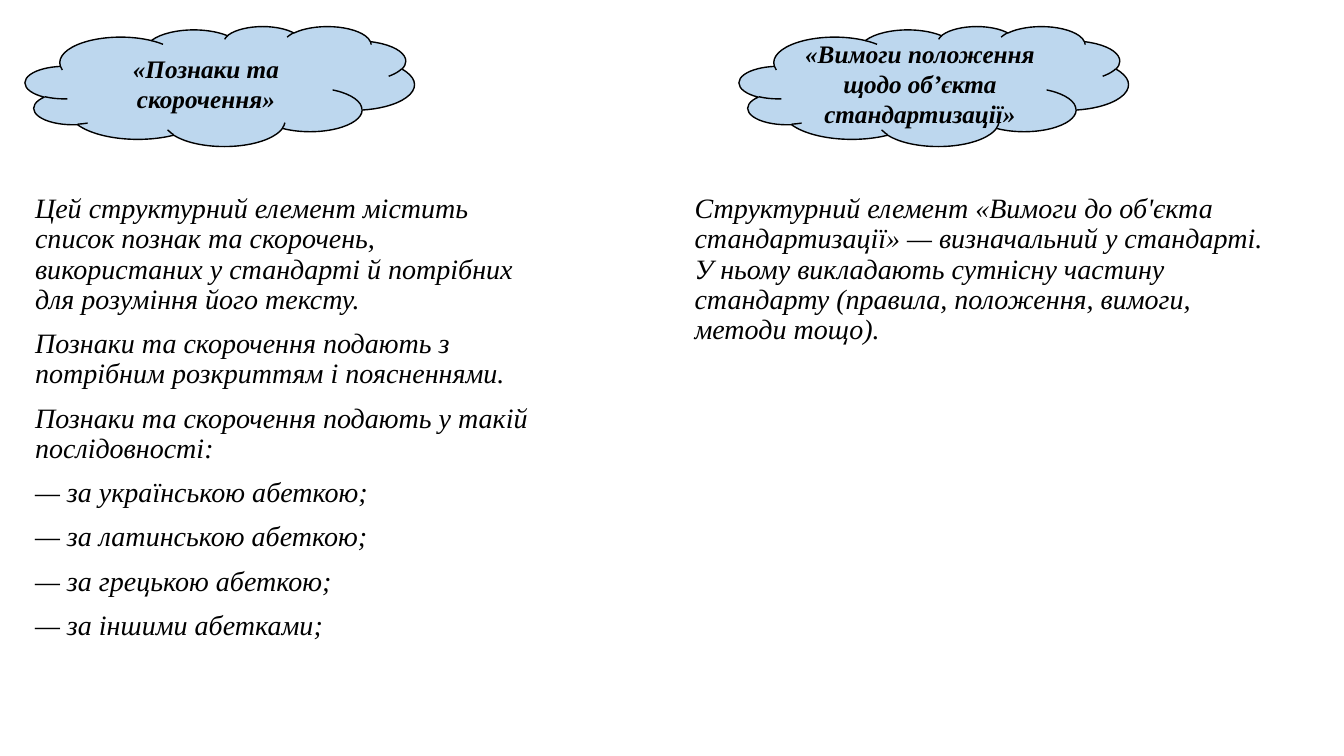
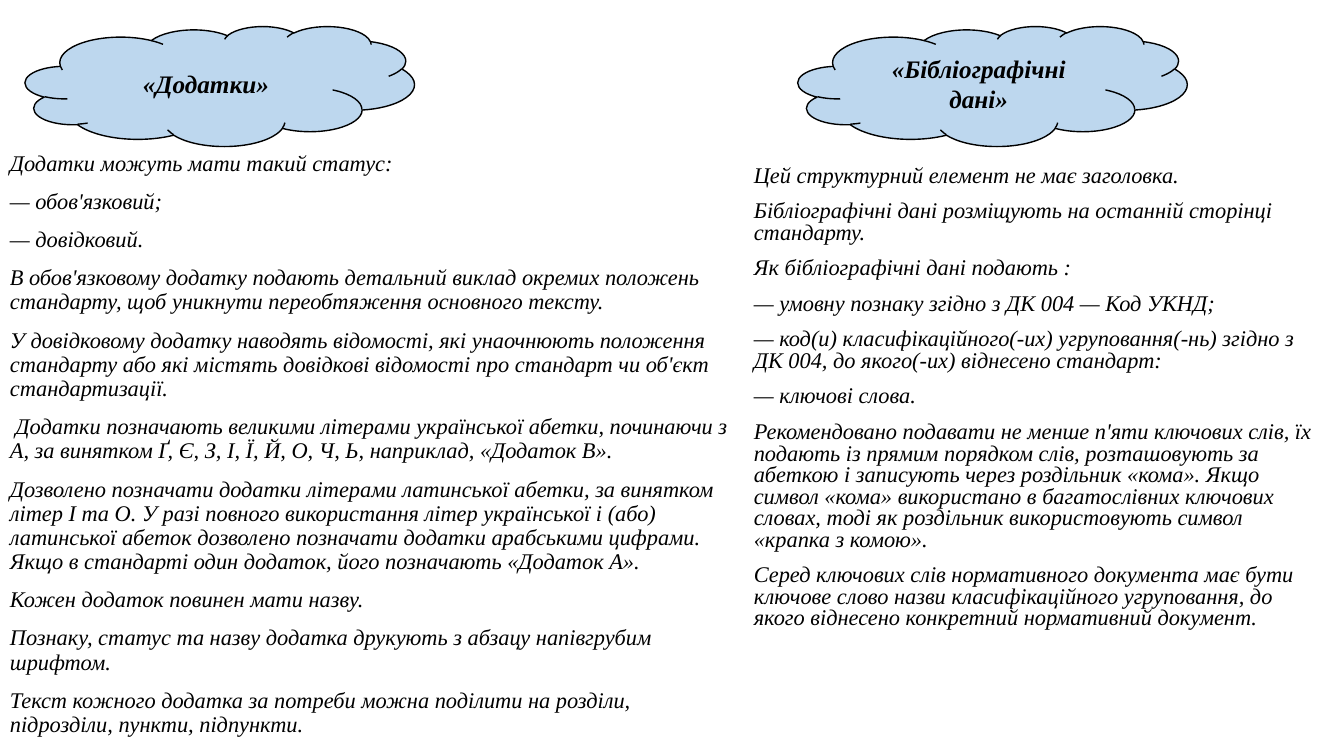
from pptx import Presentation
from pptx import util as u
from pptx.dml.color import RGBColor
from pptx.enum import shapes, text

COLORS = {"ink": "000000", "cloud": "BDD7EE", "paper": "FFFFFF"}


def color(name):
    return RGBColor.from_string(COLORS[name])


class Deck:
    font = "Times New Roman"
    cloud_top, cloud_width, cloud_height = 18.7, 278, 85.7
    heading_size = 18

    def __init__(self):
        self.prs = Presentation()
        self.prs.slide_width = u.Pt(960)
        self.prs.slide_height = u.Pt(540)
        self.s = None

    def slide(self):
        self.s = self.prs.slides.add_slide(self.prs.slide_layouts[6])
        fill = self.s.background.fill
        fill.solid()
        fill.fore_color.rgb = color("paper")

    def style(self, p, size, bold=False):
        for r in p.runs:
            r.font.name = self.font
            r.font.size = u.Pt(size)
            r.font.bold = bold
            r.font.italic = True
            r.font.color.rgb = color("ink")

    def cloud(self, left, heading):
        sp = self.s.shapes.add_shape(
            shapes.MSO_SHAPE.CLOUD, u.Pt(left), u.Pt(self.cloud_top),
            u.Pt(self.cloud_width), u.Pt(self.cloud_height))
        sp.shadow.inherit = False
        sp.fill.solid()
        sp.fill.fore_color.rgb = color("cloud")
        sp.line.color.rgb = color("ink")
        sp.line.width = u.Pt(1)
        tf = sp.text_frame
        tf.word_wrap = True
        tf.vertical_anchor = text.MSO_ANCHOR.MIDDLE
        tf.text = heading
        p = tf.paragraphs[0]
        p.alignment = text.PP_ALIGN.CENTER
        self.style(p, self.heading_size, bold=True)

    def body(self, left, top, width, height, size, paragraphs, spacing=0.9):
        sp = self.s.shapes.add_textbox(
            u.Pt(left), u.Pt(top), u.Pt(width), u.Pt(height))
        tf = sp.text_frame
        tf.word_wrap = True
        tf.text = "\n".join(paragraphs)
        for p in tf.paragraphs:
            p.line_spacing = spacing
            p.space_before = u.Pt(10)
            self.style(p, size)


def main():
    deck = Deck()

    deck.slide()
    deck.body(18, 135.4, 380, 343, 20, [
        "Цей структурний елемент містить список познак та скорочень, використаних у стандарті й потрібних для розуміння його тексту.",
        "Познаки та скорочення подають з потрібним розкриттям і поясненнями.",
        "Познаки та скорочення подають у такій послідовності:",
        "— за українською абеткою;",
        "— за латинською абеткою;",
        "— за грецькою абеткою;",
        "— за іншими абетками;",
    ])
    deck.cloud(18, "«Познаки та скорочення»")
    deck.cloud(528, "«Вимоги положення щодо об’єкта стандартизації»")
    deck.body(489, 135.4, 430.6, 343, 20, [
        "Структурний елемент «Вимоги до об'єкта стандартизації» — визначальний у стандарті. У ньому викладають сутнісну частину стандарту (правила, положення, вимоги, методи тощо).",
    ])

    deck.slide()
    deck.body(0, 105, 531.4, 420, 16, [
        "Додатки можуть мати такий статус:",
        "— обов'язковий;",
        "— довідковий.",
        "В обов'язковому додатку подають детальний виклад окремих положень стандарту, щоб уникнути переобтяження основного тексту.",
        "У довідковому додатку наводять відомості, які унаочнюють положення стандарту або які містять довідкові відомості про стандарт чи об'єкт стандартизації.",
        " Додатки позначають великими літерами української абетки, починаючи з А, за винятком Ґ, Є, З, І, Ї, Й, О, Ч, Ь, наприклад, «Додаток В».",
        "Дозволено позначати додатки літерами латинської абетки, за винятком літер І та О. У разі повного використання літер української і (або) латинської абеток дозволено позначати додатки арабськими цифрами. Якщо в стандарті один додаток, його позначають «Додаток А».",
        "Кожен додаток повинен мати назву.",
        "Познаку, статус та назву додатка друкують з абзацу напівгрубим шрифтом.",
        "Текст кожного додатка за потреби можна поділити на розділи, підрозділи, пункти, підпункти.",
    ])
    deck.cloud(18, "«Додатки»")
    deck.cloud(570, "«Бібліографічні дані»")
    deck.body(531.4, 115.2, 417.6, 343, 16, [
        "Цей структурний елемент не має заголовка.",
        "Бібліографічні дані розміщують на останній сторінці стандарту.",
        "Як бібліографічні дані подають :",
        "— умовну познаку згідно з ДК 004 — Код УКНД;",
        "— код(и) класифікаційного(-их) угруповання(-нь) згідно з ДК 004, до якого(-их) віднесено стандарт:",
        "— ключові слова.",
        "Рекомендовано подавати не менше п'яти ключових слів, їх подають із прямим порядком слів, розташовують за абеткою і записують через роздільник «кома». Якщо символ «кома» використано в багатослівних ключових словах, тоді як роздільник використовують символ «крапка з комою».",
        "Серед ключових слів нормативного документа має бути ключове слово назви класифікаційного угруповання, до якого віднесено конкретний нормативний документ.",
    ], spacing=0.8)

    deck.prs.save("out.pptx")


if __name__ == "__main__":
    main()
